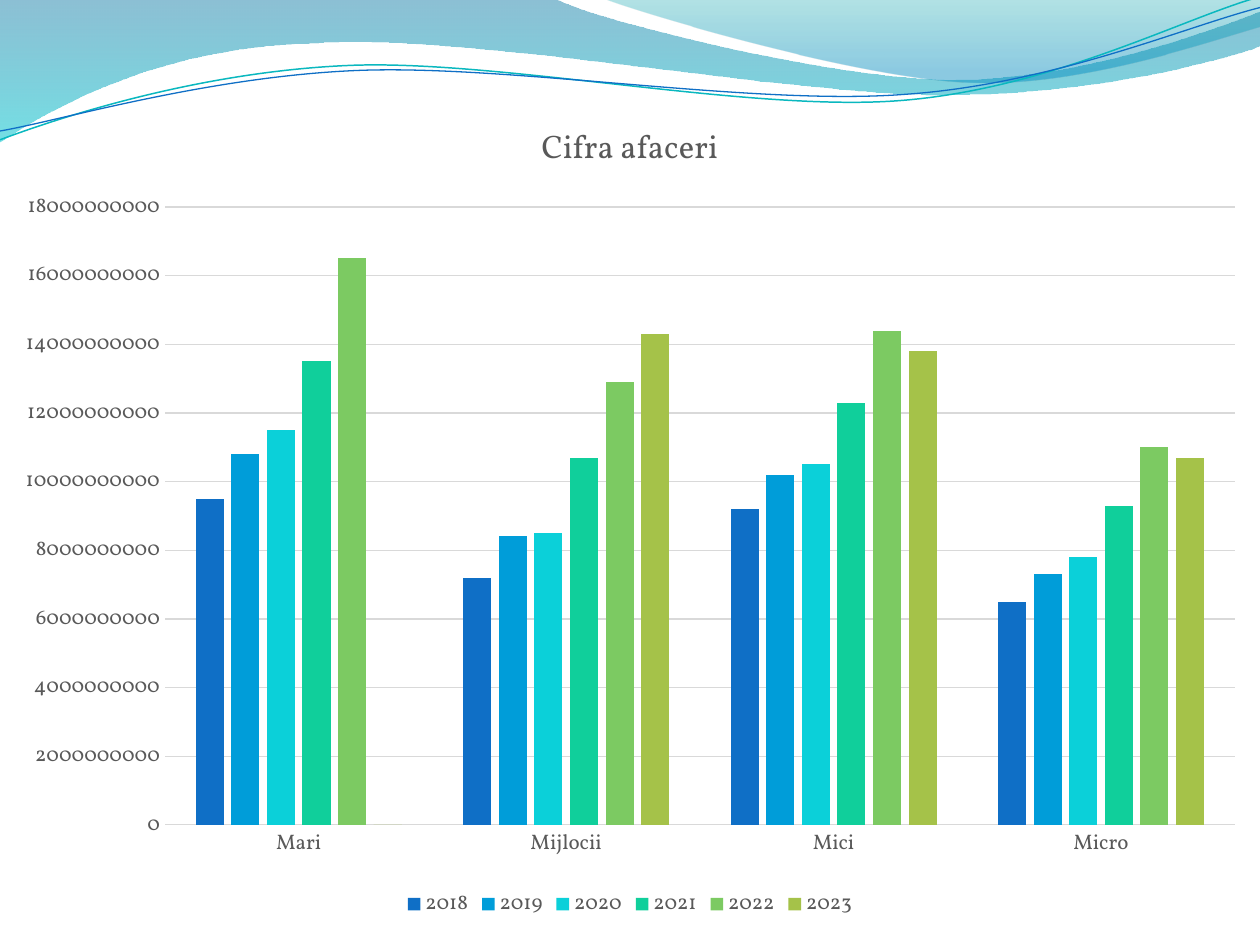
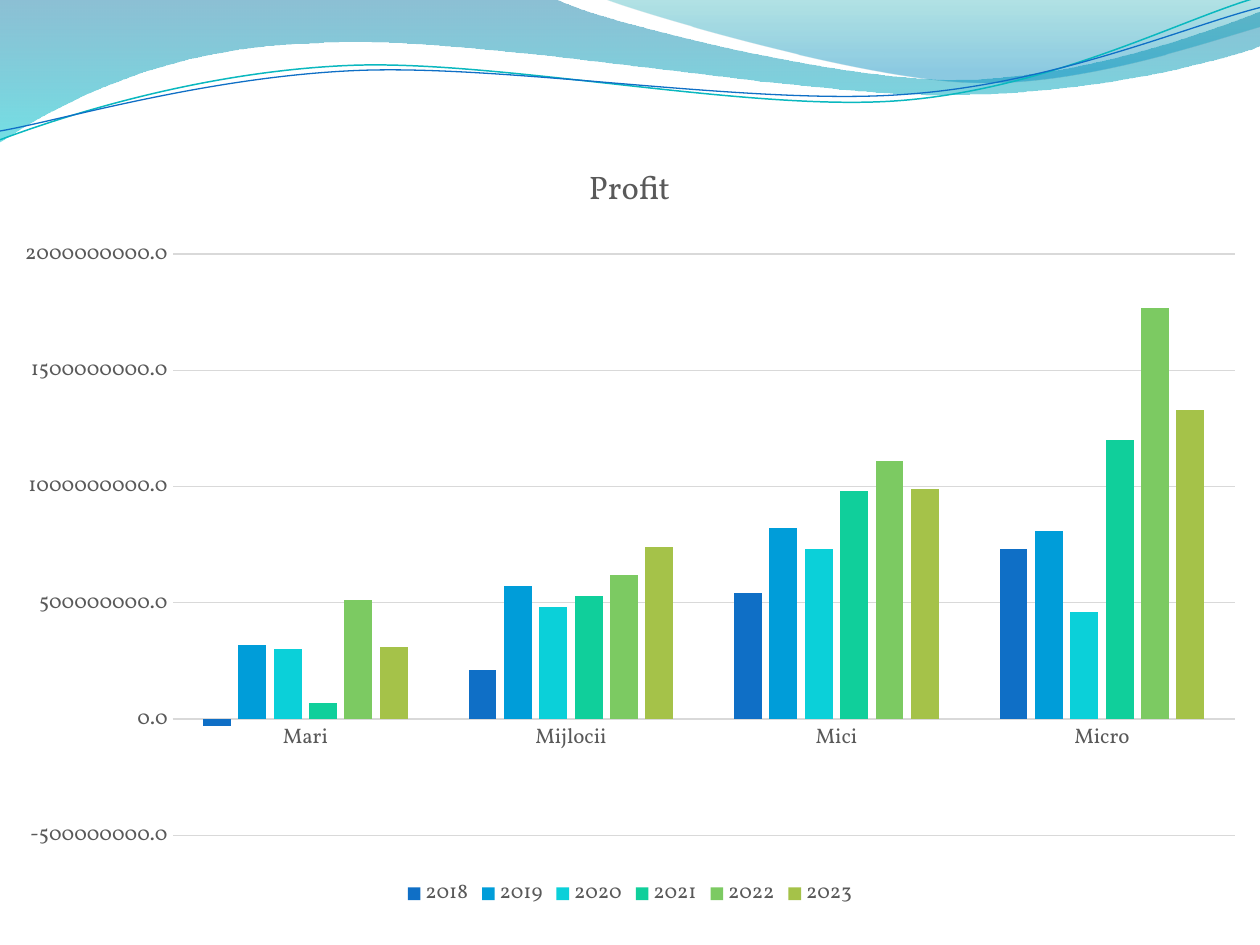
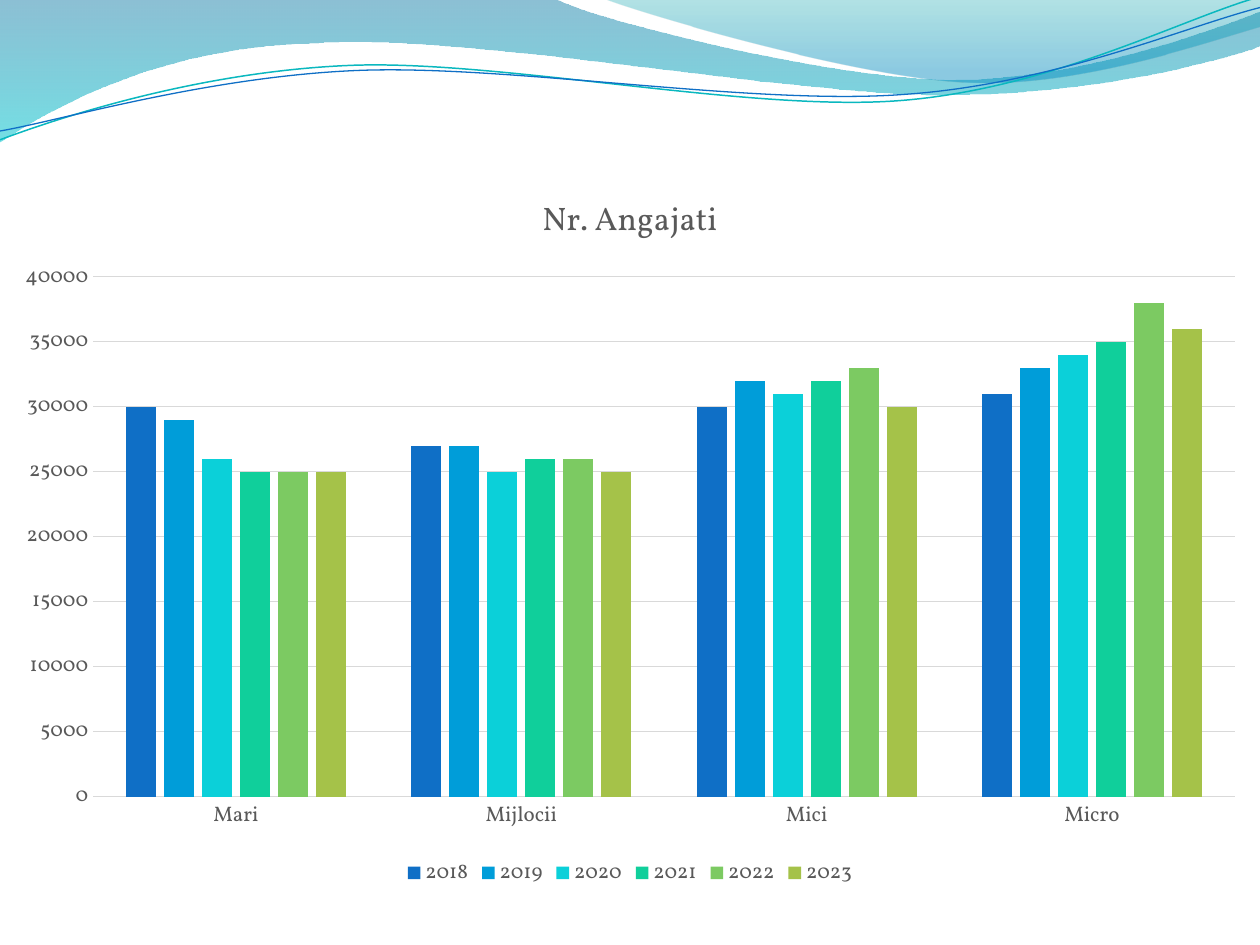
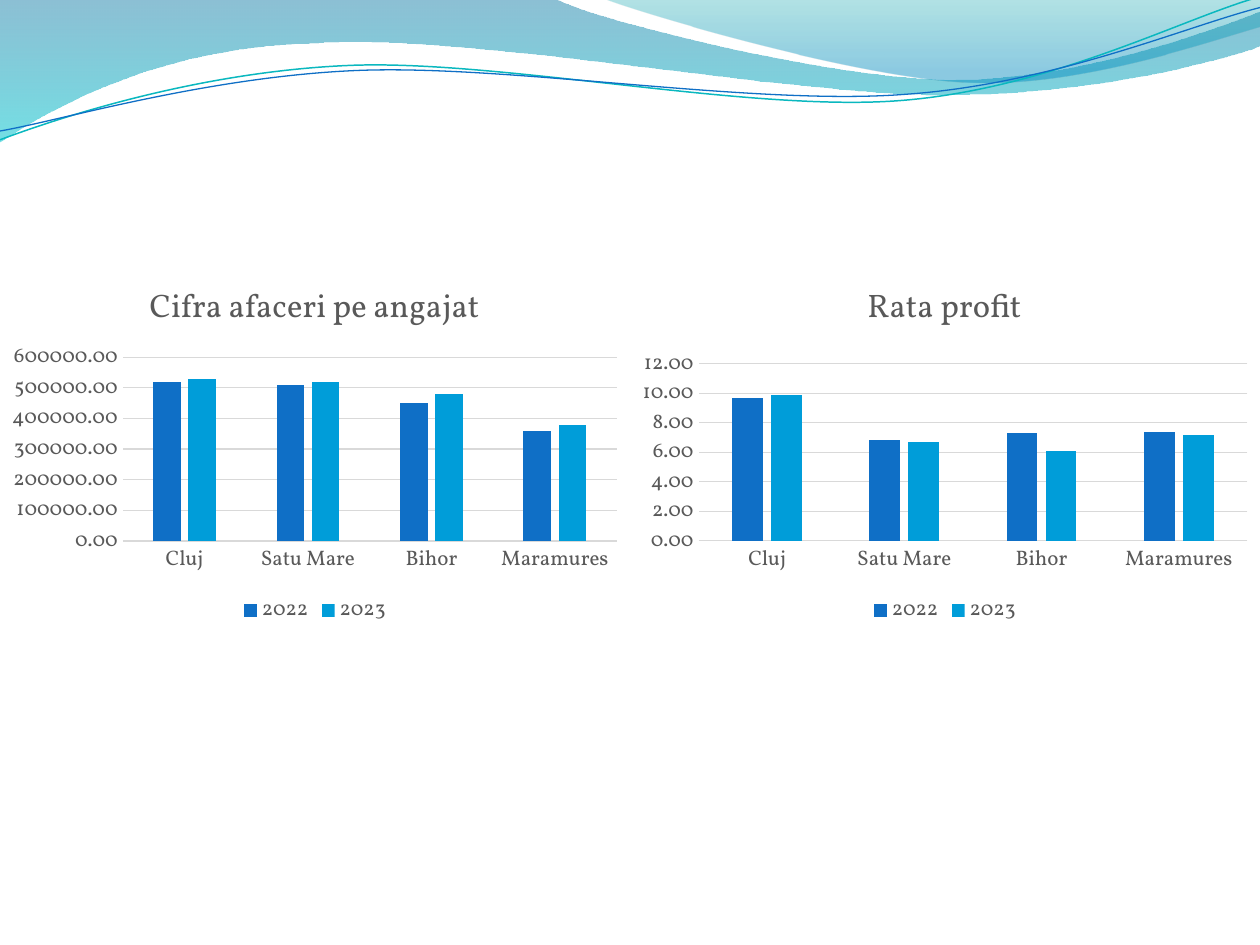
from dataclasses import dataclass

from pptx import Presentation
from pptx.chart.data import CategoryChartData
from pptx.dml.color import RGBColor
from pptx.enum.chart import XL_CHART_TYPE, XL_LEGEND_POSITION, XL_TICK_MARK
from pptx.oxml import parse_xml
from pptx.oxml.ns import nsdecls, qn
from pptx.util import Cm, Pt

COLUMN = XL_CHART_TYPE.COLUMN_CLUSTERED
BOTTOM = XL_LEGEND_POSITION.BOTTOM
NO_TICK = XL_TICK_MARK.NONE
BLANK = 6
INCH = 2.54  # cm


@dataclass(frozen=True)
class Theme:
    font: str = "Vollkorn"
    text: str = "595959"
    rule: str = "D9D9D9"
    title: float = 18.6
    label: float = 12
    hair: float = 0.75
    bars: tuple = ("0F6FC6", "009DD9", "0BD0D9", "10CF9B", "7CCA62", "A5C249")


THEME = Theme()

# Waves: start point, then steps of one point (line) or three (curve), in inches
BAND = [(0, 0), [(4.4, -0.01)],
        [(4.76, 0.17), (6.64, 0.63), (7.58, 0.63)],
        [(8.53, 0.63), (9.58, 0.26), (10, 0.09)],
        [(10.01, 0.36)],
        [(9.83, 0.44), (8.7, 0.76), (7.46, 0.75)],
        [(6.22, 0.75), (3.82, 0.28), (2.57, 0.34)],
        [(1.29, 0.36), (0.46, 0.83), (-0.01, 1.13)],
        [(0, 0)]]
CREST = [(4.79, -0.01),
         [(5.09, 0.11), (6.82, 0.62), (7.69, 0.65)],
         [(8.56, 0.69), (9.61, 0.32), (10, 0.21)],
         [(10, 0)],
         [(4.79, -0.01)]]
TEAL = [(0, 1.11),
        [(0.48, 0.93), (1.58, 0.57), (2.77, 0.52)],
        [(3.95, 0.47), (5.93, 0.89), (7.13, 0.8)],
        [(8.33, 0.71), (9.38, 0.15), (9.98, -0.02)]]
BLUE = [(0, 1.04),
        [(0.47, 0.96), (1.64, 0.61), (2.83, 0.56)],
        [(4.03, 0.51), (5.97, 0.84), (7.17, 0.75)],
        [(8.36, 0.67), (9.41, 0.21), (10, 0.06)]]

# Chart data
SIZES = ["Mari", "Mijlocii", "Mici", "Micro"]
AREAS = ["Cluj", "Satu Mare", "Bihor", "Maramures"]
YEARS = ["2018", "2019", "2020", "2021", "2022", "2023"]
SALES = [[95, 72, 92, 65], [108, 84, 102, 73], [115, 85, 105, 78],
         [135, 107, 123, 93], [165, 129, 144, 110], [0, 143, 138, 107]]
PROFIT = [[-3, 21, 54, 73], [32, 57, 82, 81], [30, 48, 73, 46],
          [7, 53, 98, 120], [51, 62, 111, 177], [31, 74, 99, 133]]
STAFF = [[30, 27, 30, 31], [29, 27, 32, 33], [26, 25, 31, 34],
         [25, 26, 32, 35], [25, 26, 33, 38], [25, 25, 30, 36]]
OUTPUT = [[52, 51, 45, 36], [53, 52, 48, 38]]
RATE = [[9.7, 6.8, 7.3, 7.4], [9.9, 6.7, 6.1, 7.2]]


def rgb(code):
    return RGBColor.from_string(code)


def style(font, size):
    font.name = THEME.font
    font.size = Pt(size)
    font.bold = False
    font.color.rgb = rgb(THEME.text)


def bend(shape, wave):
    """Join each three line points of a curve step into one cubic curve."""
    track = shape.element.find(".//" + qn("a:path"))
    lines = iter(track.findall(qn("a:lnTo")))
    for step in wave[1:]:
        group = [next(lines) for _ in step]
        if len(group) == 1:
            continue
        curve = parse_xml(f'<a:cubicBezTo {nsdecls("a")}/>')
        group[0].addprevious(curve)
        for line in group:
            curve.append(line[0])
            track.remove(line)


def outline(slide, wave, close):
    points = [wave[0]] + [point for step in wave[1:] for point in step]
    first, *rest = [(Cm(x * INCH), Cm(y * INCH)) for x, y in points]
    pen = slide.shapes.build_freeform(*first)
    pen.add_line_segments(rest, close=close)
    shape = pen.convert_to_shape()
    bend(shape, wave)
    shape.shadow.inherit = False
    shape.fill.background()
    return shape


def add_band(slide, wave, stops):
    """Closed wave; stops are (place %, colour, opacity %), top to bottom."""
    shape = outline(slide, wave, True)
    shape.line.fill.background()
    marks = "".join(
        f'<a:gs pos="{place * 1000}"><a:srgbClr val="{code}">'
        f'<a:alpha val="{alpha * 1000}"/></a:srgbClr></a:gs>'
        for place, code, alpha in stops)
    fill = parse_xml(f'<a:gradFill {nsdecls("a")} rotWithShape="1"><a:gsLst>{marks}'
                     '</a:gsLst><a:lin ang="5400000" scaled="0"/></a:gradFill>')
    props = shape.element.spPr
    props.replace(props.find(qn("a:noFill")), fill)
    return shape


def add_curve(slide, wave, code, width):
    shape = outline(slide, wave, False)
    shape.line.color.rgb = rgb(code)
    shape.line.width = Pt(width)
    return shape


def add_waves(deck, slide):
    """Draw the header waves and move them to the master."""
    waves = [
        add_band(slide, BAND, [(0, "0074A1", 45), (100, "00C6CF", 55)]),
        add_band(slide, CREST, [(0, "00A1A9", 30), (80, "008BBF", 45)]),
        add_curve(slide, TEAL, "0AB8BF", 0.85),
        add_curve(slide, BLUE, THEME.bars[0], THEME.hair),
    ]
    tree = deck.slide_master.shapes.element
    for num, wave in enumerate(waves, 20):
        wave.element.nvSpPr.cNvPr.id = num
        tree.append(wave.element)


def set_axes(chart, span, form):
    low, high, step = span
    cat, val = chart.category_axis, chart.value_axis
    for axis in (cat, val):
        axis.major_tick_mark = axis.minor_tick_mark = NO_TICK
        style(axis.tick_labels.font, THEME.label)
    val.minimum_scale, val.maximum_scale, val.major_unit = low, high, step
    val.tick_labels.number_format = form
    val.tick_labels.number_format_is_linked = False
    val.format.line.fill.background()
    val.has_major_gridlines = True
    cat.has_major_gridlines = False
    for line in (cat.format.line, val.major_gridlines.format.line):
        line.color.rgb = rgb(THEME.rule)
        line.width = Pt(THEME.hair)


def place_plot(chart, frame):
    """Set the inner plot frame: left, top, width, height in % of the chart."""
    sizes = "".join(f'<c:{tag} val="{part / 100:.3f}"/>'
                    for tag, part in zip("xywh", frame))
    area = chart.element.find(".//" + qn("c:plotArea"))
    old = area.find(qn("c:layout"))
    if old is not None:
        area.remove(old)
    area.insert(0, parse_xml(
        f'<c:layout {nsdecls("c")}><c:manualLayout><c:layoutTarget val="inner"/>'
        f'<c:xMode val="edge"/><c:yMode val="edge"/>{sizes}'
        '</c:manualLayout></c:layout>'))


def add_bars(slide, box, title, cats, names, rows, span, form, unit=1, frame=None):
    data = CategoryChartData(number_format=form)
    data.categories = cats
    for name, row in zip(names, rows):
        data.add_series(name, [v * unit for v in row])
    chart = slide.shapes.add_chart(COLUMN, *map(Cm, box), data).chart
    style(chart.font, THEME.label)

    # Title and legend
    chart.has_title = True
    run = chart.chart_title.text_frame.paragraphs[0].add_run()
    run.text = title
    style(run.font, THEME.title)
    chart.chart_title.include_in_layout = False
    chart.has_legend = True
    chart.legend.position = BOTTOM
    chart.legend.include_in_layout = False
    style(chart.legend.font, THEME.label)

    # Axes and columns
    set_axes(chart, span, form)
    if frame:
        place_plot(chart, frame)
    plot = chart.plots[0]
    plot.vary_by_categories = False
    plot.gap_width, plot.overlap = 219, -27
    for bar, code in zip(plot.series, THEME.bars):
        bar.invert_if_negative = False
        bar.format.fill.solid()
        bar.format.fill.fore_color.rgb = rgb(code)


def main():
    deck = Presentation()
    deck.slide_width, deck.slide_height = Cm(25.4), Cm(19.05)
    sales, profit, staff, areas = [
        deck.slides.add_slide(deck.slide_layouts[BLANK]) for _ in range(4)]
    add_waves(deck, sales)

    # One chart by firm size on each slide
    add_bars(sales, (0, 1.9, 25.4, 16.72), "Cifra afaceri", SIZES, YEARS, SALES,
             (0, 18 * 10**9, 2 * 10**9), "0", 10**8, (13.1, 13.6, 84.9, 74.5))
    add_bars(profit, (0, 2.75, 25.4, 15.66), "Profit", SIZES, YEARS, PROFIT,
             (-5 * 10**8, 2 * 10**9, 5 * 10**8), "0.0", 10**7)
    add_bars(staff, (0, 3.39, 25.4, 14.6), "Nr. Angajati", SIZES, YEARS, STAFF,
             (0, 40000, 5000), "0", 1000, (7.4, 15, 90.6, 71.8))

    # Two charts side by side
    half = 12.7
    pair = [("Cifra afaceri pe angajat", OUTPUT, (0, 600000, 100000), 10000,
             (19.5, 25.8, 78.4, 50)),
            ("Rata profit", RATE, (0, 12, 2), 1, None)]
    for i, (title, rows, span, unit, frame) in enumerate(pair):
        add_bars(areas, (i * half, 5.29, half, 7.41), title, AREAS, YEARS[-2:],
                 rows, span, "0.00", unit, frame)
    deck.save("out.pptx")


if __name__ == "__main__":
    main()
